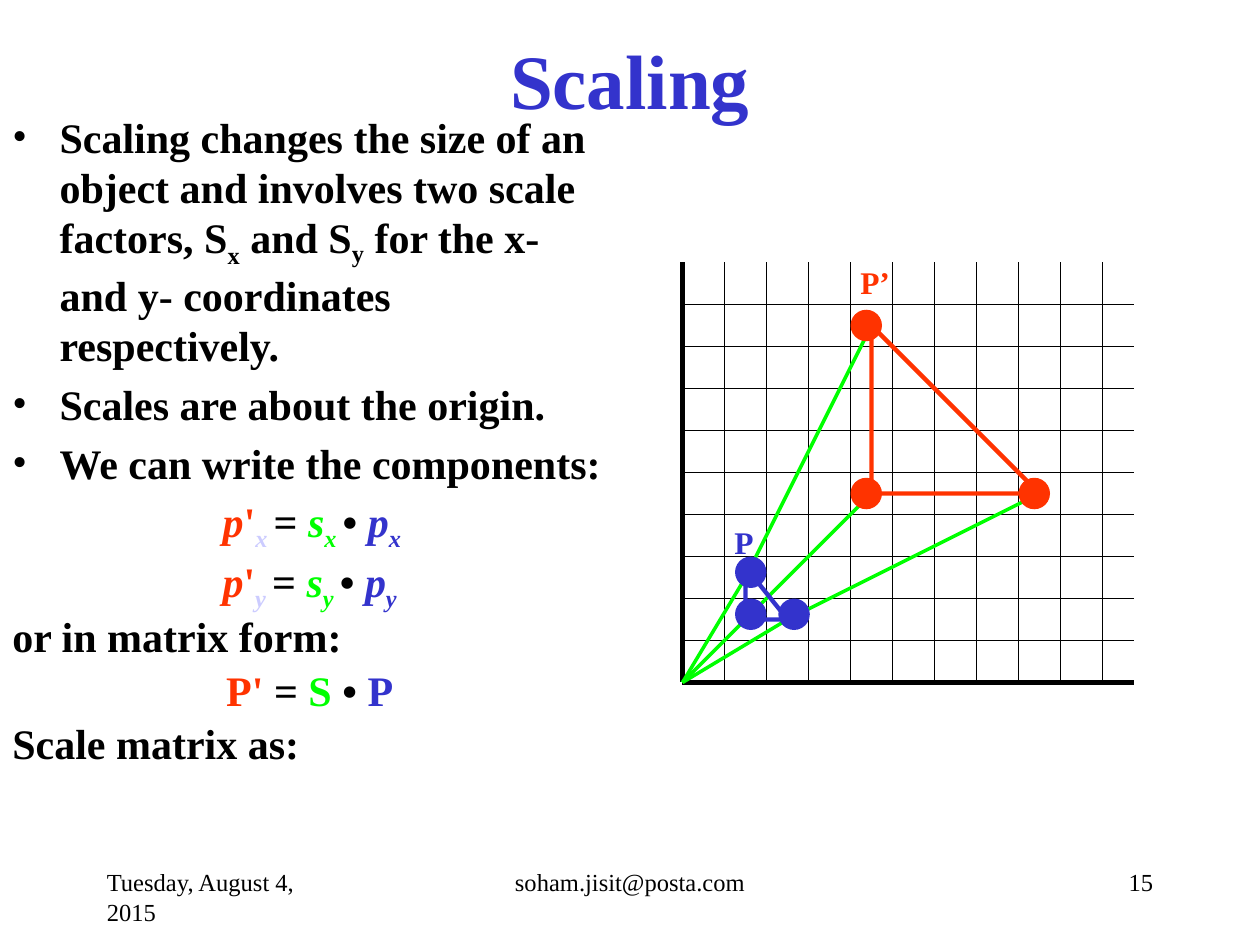
import lxml.etree
import pptx
import pptx.dml.color
import pptx.enum.shapes
import pptx.enum.text
import pptx.oxml.ns
import pptx.util

PX = 9525  # EMU in one px, 96 px to the inch
theme = {
    "font": "Times New Roman",
    "black": "000000", "blue": "3333CC", "red": "FF3300",
    "green": "00FF00", "pale": "CCCCFF",
    "title": 44, "body": 24, "label": 18, "foot": 14,
}
rgb = pptx.dml.color.RGBColor.from_string
qn = pptx.oxml.ns.qn
Align = pptx.enum.text.PP_ALIGN
Kind = pptx.enum.shapes.MSO_SHAPE

deck = pptx.Presentation()
deck.slide_width, deck.slide_height = 960 * PX, 720 * PX
slide = deck.slides.add_slide(deck.slide_layouts[6])
shapes = slide.shapes


def add_text(box, paras, size, bold=True, wrap=True):
    """Each paragraph is (format, bullet, runs); a run is (text, colour, italic, baseline)."""
    frame = shapes.add_textbox(*(n * PX for n in box)).text_frame
    frame.word_wrap = wrap
    for i, (form, bullet, runs) in enumerate(paras):
        para = frame.add_paragraph() if i else frame.paragraphs[0]
        for key, val in form.items():
            setattr(para, key, val)
        if size == "body":
            props = para._p.get_or_add_pPr()
            props.set("marL", str(36 * PX))
            props.set("indent", str(-36 * PX))
            if bullet:
                lxml.etree.SubElement(props, qn("a:buFont")).set("typeface", theme["font"])
                lxml.etree.SubElement(props, qn("a:buChar")).set("char", "•")
        for words, hue, slant, base in runs:
            run = para.add_run()
            run.text = words
            look = {"name": theme["font"], "size": pptx.util.Pt(theme[size]),
                    "bold": bold, "italic": slant}
            for key, val in look.items():
                setattr(run.font, key, val)
            run.font.color.rgb = rgb(theme[hue])
            if base:
                run._r.get_or_add_rPr().set("baseline", str(base * 1000))
    return frame


def add_line(start, end, hue, width, arrow=False):
    line = shapes.add_connector(pptx.enum.shapes.MSO_CONNECTOR.STRAIGHT,
                                *(n * PX for n in start + end))
    line.line.color.rgb = rgb(theme[hue])
    line.line.width = pptx.util.Pt(width)
    props = line._element.spPr
    if arrow:
        lxml.etree.SubElement(props.find(qn("a:ln")), qn("a:tailEnd")).set("type", "triangle")
    lxml.etree.SubElement(props, qn("a:effectLst"))


# Title
title = add_text((72, 0, 816, 120),
                 [({"alignment": Align.CENTER}, False, [("Scaling", "blue", False, 0)])], "title")
title.vertical_anchor = pptx.enum.text.MSO_ANCHOR.MIDDLE

# Body text and formulas
gap = {"space_before": pptx.util.Pt(4.8)}
tight = {**gap, "line_spacing": 0.9}
mid = {**tight, "alignment": Align.CENTER}
paras = [
    (gap, True, [
        ("Scaling changes the size of an object and involves two scale factors, S", "black", False, 0),
        ("x", "black", False, -25),
        (" and S", "black", False, 0),
        ("y", "black", False, -20),
        (" for the x- and y- coordinates respectively.", "black", False, 0)]),
    (gap, True, [("Scales are about the origin.", "black", False, 0)]),
    (gap, True, [("We can write the components:", "black", False, 0)]),
]
for axis, lead, last in (("x", " ", "x "), ("y", "", "y")):
    paras.append((mid, False, [
        (lead + "p", "red", True, 0), ("'", "red", False, 0), (axis + " ", "pale", True, -25),
        ("= ", "black", False, 0),
        ("s", "green", True, 0), (axis + " ", "green", True, -25),
        ("• ", "black", False, 0),
        ("p", "blue", True, 0), (last, "blue", True, -25)]))
paras += [
    (tight, False, [("or in matrix form:", "black", False, 0)]),
    (mid, False, [(words, hue, False, 0) for words, hue in (
        ("P' ", "red"), ("= ", "black"), ("S ", "green"), ("• ", "black"), ("P", "blue"))]),
    (tight, False, [("Scale matrix as:", "black", False, 0)]),
]
add_text((0, 80, 472, 616), paras, "body")

# Axes and grid
left, top, right, base, step = 520, 200, 864, 520, 32
for i in range(11):
    x = left + i * step
    add_line((x, top), (x, base), "black", 0.75 if i else 3)
for i in range(10):
    y = base - i * step
    add_line((left, y), (right, y), "black", 0.75 if i else 3)

# Rays from the small triangle to the large one
small = [(568, 440), (568, 472), (600, 472)]
large = [(664, 248), (664, 376), (792, 376)]
for start, end in zip(small, large):
    add_line(start, end, "green", 2, arrow=True)

# Triangles
for box, hue in (((568, 432, 32, 40), "blue"), ((664, 248, 128, 128), "red")):
    tri = shapes.add_shape(Kind.RIGHT_TRIANGLE, *(n * PX for n in box))
    tri.shadow.inherit = False
    tri.fill.background()
    tri.line.color.rgb = rgb(theme[hue])
    tri.line.width = pptx.util.Pt(2.5)

# Rays back to the origin
for start in small:
    add_line(start, (left, base), "green", 2)

# Corner dots
dots = {"blue": [(560, 456), (593, 456), (560, 424)],
        "red": [(648, 364), (776, 364), (648, 236)]}
for hue, spots in dots.items():
    for x, y in spots:
        dot = shapes.add_shape(Kind.OVAL, x * PX, y * PX, 24 * PX, 24 * PX)
        dot.shadow.inherit = False
        dot.fill.solid()
        dot.fill.fore_color.rgb = rgb(theme[hue])
        dot.line.fill.background()

# Point labels
for words, hue, box, wrap in (("P", "blue", (550, 394, 50, 38), True),
                              ("P’", "red", (646, 196, 42, 38), False)):
    label = add_text(box, [({}, False, [(words, hue, False, 0)])], "label", wrap=wrap)
    label.auto_size = pptx.enum.text.MSO_AUTO_SIZE.SHAPE_TO_FIT_TEXT

# Footer
for words, x, width, side in (("Tuesday, August 4, 2015", 72, 200, Align.LEFT),
                              ("soham.jisit@posta.com", 328, 304, Align.CENTER),
                              ("15", 688, 200, Align.RIGHT)):
    add_text((x, 656, width, 48),
             [({"alignment": side}, False, [(words, "black", False, 0)])], "foot", bold=False)

deck.save("out.pptx")
